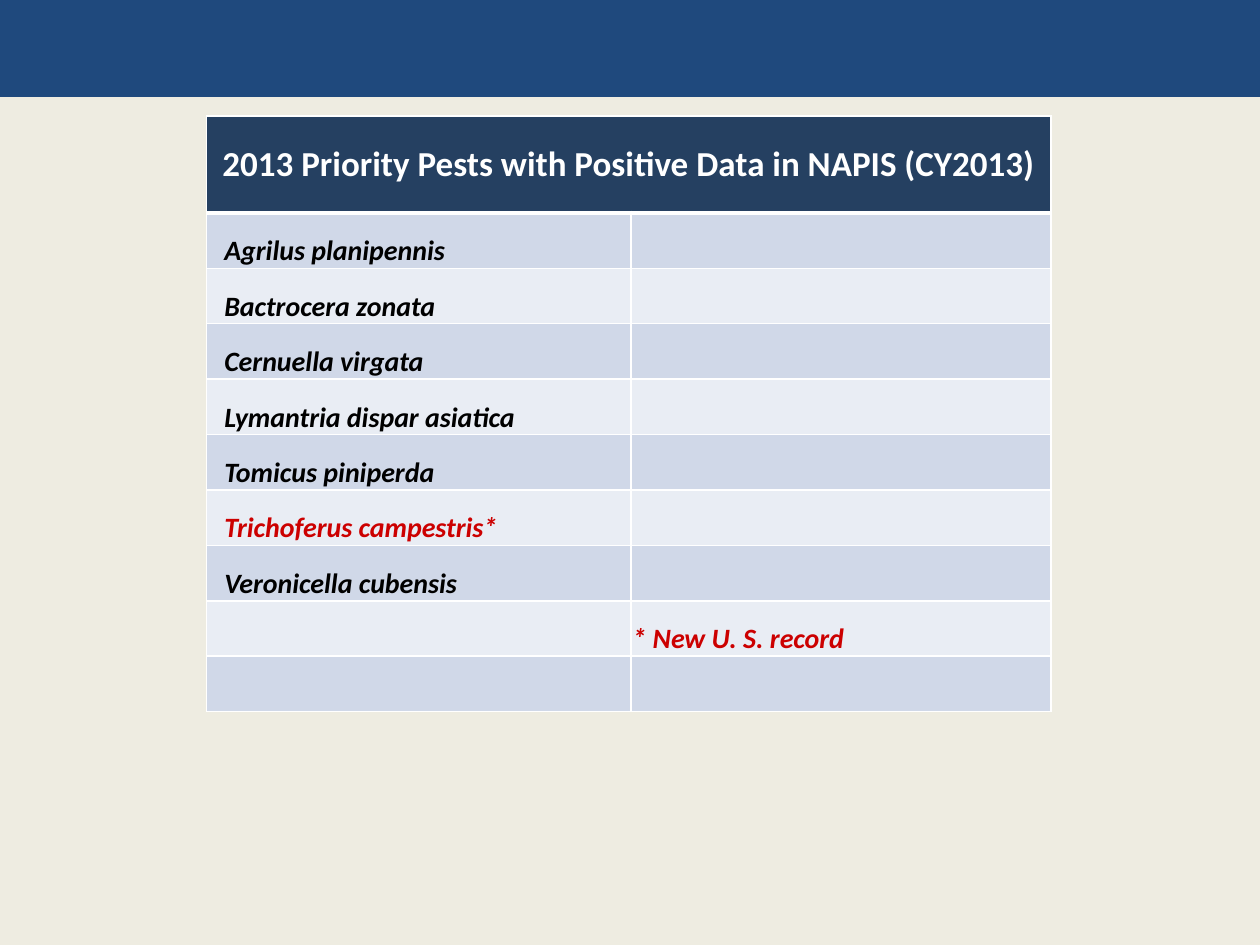
from lxml.etree import SubElement
from pptx import Presentation
from pptx.dml.color import RGBColor
from pptx.enum.shapes import MSO_SHAPE as Shape
from pptx.enum.text import MSO_ANCHOR as Anchor, PP_ALIGN as Align
from pptx.oxml.ns import qn
from pptx.util import Inches, Pt

WHITE, BLACK, RED = "FFFFFF", "000000", "CC0000"
BANDS = ["D0D8E8", "E9EDF4"]
HEADING = "2013 Priority Pests with Positive Data in NAPIS (CY2013)"
ROWS = [
    ("Agrilus planipennis", ""),
    ("Bactrocera zonata", ""),
    ("Cernuella virgata", ""),
    ("Lymantria dispar asiatica", ""),
    ("Tomicus piniperda", ""),
    ("Trichoferus campestris*", ""),
    ("Veronicella cubensis", ""),
    ("", "* New U. S. record"),
    ("", ""),
]


def color(hex_string):
    return RGBColor.from_string(hex_string)


def format_cell(cell, fill, bottom_width=1, top_width=1):
    """Give the cell white borders and a solid fill."""
    properties = cell._tc.get_or_add_tcPr()
    widths = {"a:lnL": 1, "a:lnR": 1, "a:lnT": top_width, "a:lnB": bottom_width}
    for side, width in widths.items():
        line = SubElement(properties, qn(side), w=str(Pt(width)))
        solid = SubElement(line, qn("a:solidFill"))
        SubElement(solid, qn("a:srgbClr"), val=WHITE)
    cell.fill.solid()
    cell.fill.fore_color.rgb = color(fill)


presentation = Presentation()
presentation.slide_width = Inches(10)
presentation.slide_height = Inches(7.5)
slide = presentation.slides.add_slide(presentation.slide_layouts[6])
slide.background.fill.solid()
slide.background.fill.fore_color.rgb = color("EEECE1")

banner = slide.shapes.add_shape(Shape.RECTANGLE, 0, 0, Inches(10), Inches(0.77))
banner.shadow.inherit = False
banner.fill.solid()
banner.fill.fore_color.rgb = color("1F497D")
banner.line.fill.background()

table = slide.shapes.add_table(
    len(ROWS) + 1, 2, Inches(1.64), Inches(0.92), Inches(6.7), Inches(4.69)
).table
for column, width in zip(table.columns, [3.37, 3.33]):
    column.width = Inches(width)
for number, row in enumerate(table.rows):
    row.height = Inches(0.44 if number else 0.77)

heading = table.cell(0, 0)
heading.merge(table.cell(0, 1))
for cell in table.rows[0].cells:
    format_cell(cell, "254061", bottom_width=3)
heading.text = HEADING
heading.vertical_anchor = Anchor.MIDDLE
paragraph = heading.text_frame.paragraphs[0]
paragraph.alignment = Align.CENTER
heading_font = {"name": "Calibri", "size": Pt(20), "bold": True}
for name, value in heading_font.items():
    setattr(paragraph.runs[0].font, name, value)
paragraph.runs[0].font.color.rgb = color(WHITE)

cell_format = {
    "vertical_anchor": Anchor.BOTTOM,
    "margin_left": Inches(0.01),
    "margin_top": Inches(0.01),
    "margin_right": Inches(0.01),
    "margin_bottom": 0,
}
body_font = {"name": "Calibri", "size": Pt(16), "bold": True, "italic": True}
for number, texts in enumerate(ROWS):
    for column, text in enumerate(texts):
        cell = table.cell(number + 1, column)
        format_cell(cell, BANDS[number % 2], top_width=1 if number else 3)
        if not text:
            continue
        cell.text = text
        for name, value in cell_format.items():
            setattr(cell, name, value)
        paragraph = cell.text_frame.paragraphs[0]
        if column == 0:
            paragraph._p.get_or_add_pPr().set("marL", str(Inches(0.13)))
        font = paragraph.runs[0].font
        for name, value in body_font.items():
            setattr(font, name, value)
        font.color.rgb = color(RED if "*" in text else BLACK)

presentation.save("out.pptx")
